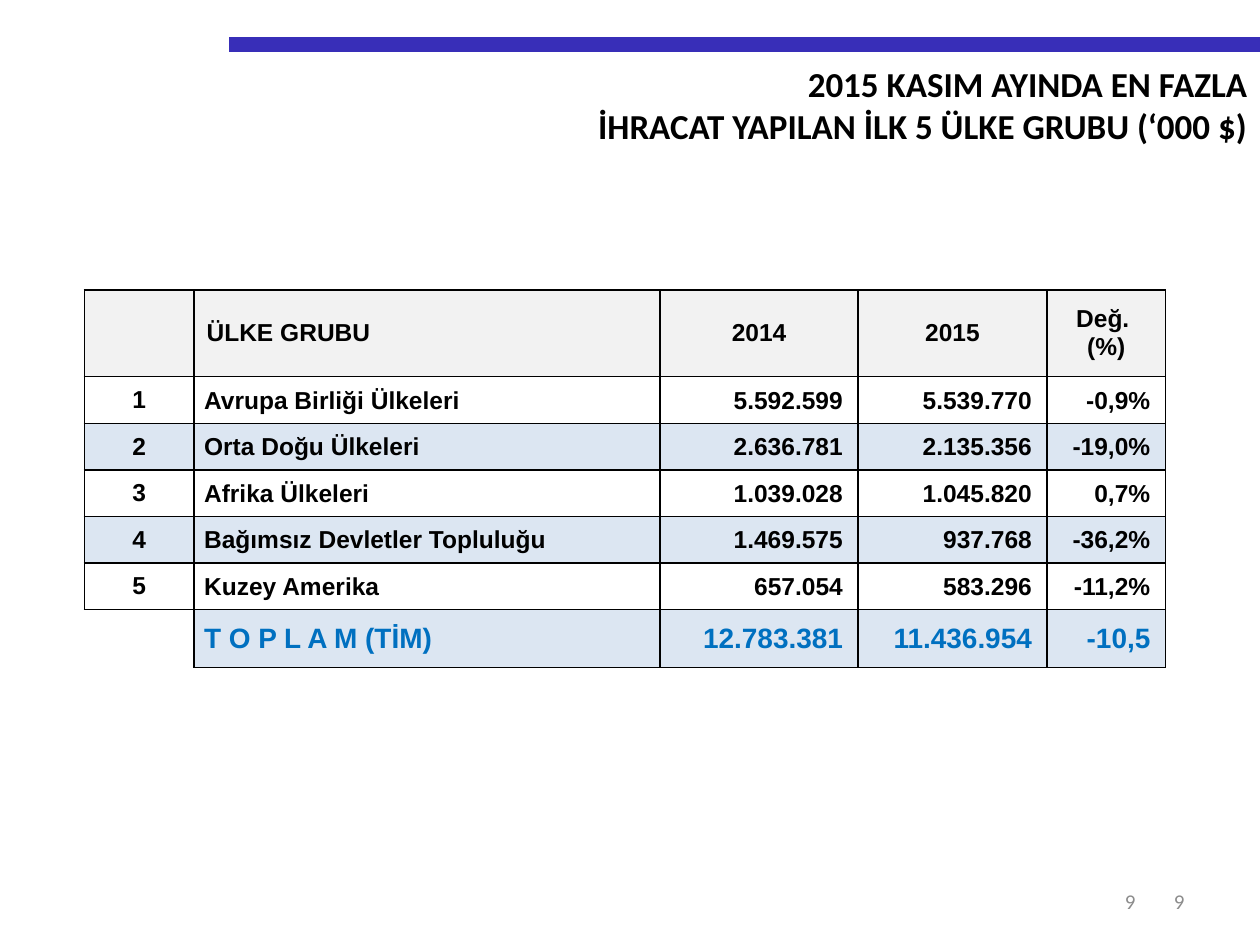
from lxml.etree import SubElement
from pptx import Presentation
from pptx.dml.color import RGBColor
from pptx.enum.shapes import MSO_CONNECTOR
from pptx.enum.text import MSO_ANCHOR, PP_ALIGN
from pptx.oxml.ns import qn
from pptx.util import Inches, Pt

COLORS = {
    "bar": "382EB8",
    "text": "000000",
    "number": "8C8C8C",
    "header": "F2F2F2",
    "band": "DCE6F2",
    "total": "0070C0",
}
LEFT, CENTER, RIGHT = PP_ALIGN.LEFT, PP_ALIGN.CENTER, PP_ALIGN.RIGHT


def write_lines(text_frame, lines, alignment, font_name, size, color, bold=True):
    """Write each line as a paragraph holding one run."""
    for index, line in enumerate(lines):
        paragraph = text_frame.paragraphs[0] if index == 0 else text_frame.add_paragraph()
        paragraph.alignment = alignment
        run = paragraph.add_run()
        run.text = line
        run.font.name = font_name
        run.font.size = Pt(size)
        run.font.bold = bold
        run.font.color.rgb = RGBColor.from_string(COLORS[color])


def set_borders(cell, visible_sides):
    """Draw 1 pt lines on the given sides (L, R, T, B) and none on the others."""
    properties = cell._tc.get_or_add_tcPr()
    for side in "LRTB":
        line = SubElement(properties, qn(f"a:ln{side}"), w=str(Pt(1)))
        if side in visible_sides:
            fill = SubElement(line, qn("a:solidFill"))
            SubElement(fill, qn("a:srgbClr"), val=COLORS["text"])
        else:
            SubElement(line, qn("a:noFill"))


presentation = Presentation()
presentation.slide_width = Inches(10)
presentation.slide_height = Inches(7.5)
slide = presentation.slides.add_slide(presentation.slide_layouts[6])

# Top bar
bar = slide.shapes.add_connector(
    MSO_CONNECTOR.STRAIGHT, Inches(1.82), Inches(0.35), Inches(10), Inches(0.35)
)
bar.line.color.rgb = RGBColor.from_string(COLORS["bar"])
bar.line.width = Pt(8.5)
SubElement(bar._element.spPr, qn("a:effectLst"))

# Slide numbers
for left, width in ((7.17, 2.33), (7.01, 2.1)):
    number_box = slide.shapes.add_textbox(
        Inches(left), Inches(6.95), Inches(width), Inches(0.4)
    )
    number_box.text_frame.word_wrap = True
    number_box.text_frame.vertical_anchor = MSO_ANCHOR.MIDDLE
    write_lines(number_box.text_frame, ["9"], RIGHT, "Calibri", 12, "number", bold=False)

# Title
title_box = slide.shapes.add_textbox(Inches(1.06), Inches(0.45), Inches(8.94), Inches(0.77))
title_box.text_frame.word_wrap = True
title_lines = ["2015 KASIM AYINDA EN FAZLA", "İHRACAT YAPILAN İLK 5 ÜLKE GRUBU (‘000 $)"]
write_lines(title_box.text_frame, title_lines, RIGHT, "Calibri", 20, "text")

# Export table
rows = [
    ("", "ÜLKE GRUBU", "2014", "2015", "Değ. \n(%)"),
    ("1", "Avrupa Birliği Ülkeleri", "5.592.599", "5.539.770", "-0,9%"),
    ("2", "Orta Doğu Ülkeleri", "2.636.781", "2.135.356", "-19,0%"),
    ("3", "Afrika Ülkeleri", "1.039.028", "1.045.820", "0,7%"),
    ("4", "Bağımsız Devletler Topluluğu", "1.469.575", "937.768", "-36,2%"),
    ("5", "Kuzey Amerika", "657.054", "583.296", "-11,2%"),
    ("", "T O P L A M (TİM)", "12.783.381", "11.436.954", "-10,5"),
]
column_widths = [0.87, 3.7, 1.57, 1.5, 0.94]
row_heights = [0.69] + [0.37] * 5 + [0.46]
total_row = len(rows) - 1

table = slide.shapes.add_table(
    len(rows), len(column_widths),
    Inches(0.67), Inches(2.3), Inches(sum(column_widths)), Inches(sum(row_heights)),
).table
table.first_row = False
table.horz_banding = False
for column, width in zip(table.columns, column_widths):
    column.width = Inches(width)
for row, height in zip(table.rows, row_heights):
    row.height = Inches(height)

for row_index, values in enumerate(rows):
    is_header, is_total = row_index == 0, row_index == total_row
    for column_index, value in enumerate(values):
        cell = table.cell(row_index, column_index)
        is_corner = is_total and column_index == 0
        cell.vertical_anchor = MSO_ANCHOR.MIDDLE
        set_borders(cell, "RT" if is_corner else "LRTB")

        if is_header or (row_index % 2 == 0 and not is_corner):
            cell.fill.solid()
            fill_color = COLORS["header" if is_header else "band"]
            cell.fill.fore_color.rgb = RGBColor.from_string(fill_color)
        else:
            cell.fill.background()

        if column_index > 0 and not is_header:
            is_name = column_index == 1
            cell.margin_left = Inches(0.08 if is_name else 0.01)
            cell.margin_right = Inches(0.01 if is_name else 0.12)
            cell.margin_top = Inches(0.01)
            cell.margin_bottom = 0

        if value:
            if column_index == 1:
                alignment = LEFT
            else:
                alignment = CENTER if is_header or column_index == 0 else RIGHT
            size, color = (16, "total") if is_total else (14, "text")
            write_lines(cell.text_frame, value.split("\n"), alignment, "Arial", size, color)

presentation.save("out.pptx")
